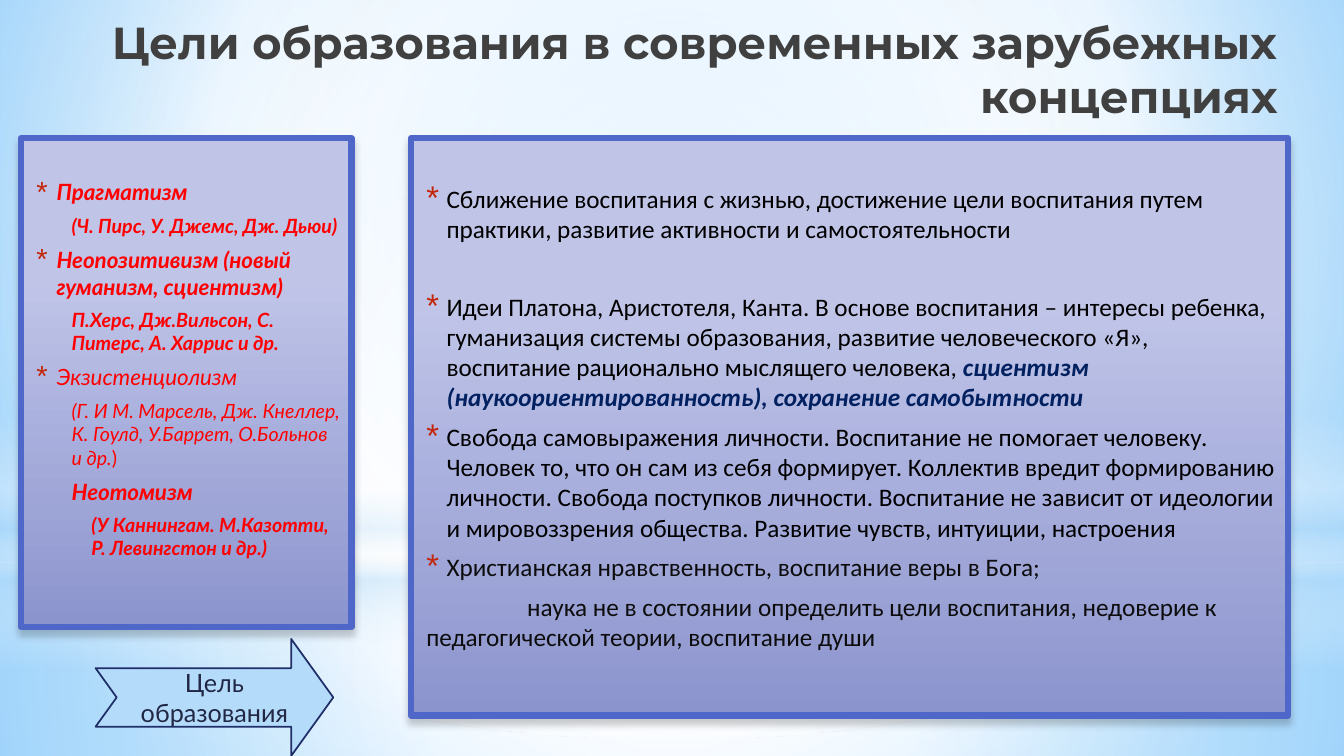
from lxml import etree
from pptx import Presentation, util as u
from pptx.dml.color import RGBColor
from pptx.enum import shapes, text
from pptx.oxml.ns import qn

RED, BLACK, NAVY = "FF0000", "000000", "002060"
PANEL_STOPS = [(28, "C0C5E8"), (100, "8C94CE")]
CENTRE = (50, 50, 50, 50)

SCHOOLS = [
    ("Прагматизм", 0, True),
    ("(Ч. Пирс, У. Джемс, Дж. Дьюи)", 1, True),
    ("Неопозитивизм (новый гуманизм, сциентизм)", 0, True),
    ("П.Херс, Дж.Вильсон, С. Питерс, А. Харрис и др.", 1, True),
    ("Экзистенциолизм", 0, False),
    ("(Г. И М. Марсель, Дж. Кнеллер, К. Гоулд, У.Баррет, О.Больнов и др.", 1, False),
    ("Неотомизм", 1, True),
    ("(У Каннингам. М.Казотти, Р. Левингстон и др.)", 1, True),
]
GOALS = [
    ("Сближение воспитания с жизнью, достижение цели воспитания путем практики, "
     "развитие активности и самостоятельности", BLACK),
    ("Идеи Платона, Аристотеля, Канта. В основе воспитания – интересы ребенка, "
     "гуманизация системы образования, развитие человеческого «Я», воспитание "
     "рационально мыслящего человека, ", BLACK),
    ("Свобода самовыражения личности. Воспитание не помогает человеку. Человек то, "
     "что он сам из себя формирует. Коллектив вредит формированию личности. Свобода "
     "поступков личности. Воспитание не зависит от идеологии и мировоззрения общества. "
     "Развитие чувств, интуиции, настроения", BLACK),
    ("Христианская нравственность, воспитание веры в Бога;", "0D0D0D"),
    ("наука не в состоянии определить цели воспитания, недоверие к педагогической "
     "теории, воспитание души", "0D0D0D"),
]


def colour(value):
    return RGBColor.from_string(value)


def child(parent, tag, **attributes):
    values = {name: str(value) for name, value in attributes.items()}
    return etree.SubElement(parent, qn(tag), values)


def gradient(owner, fill, stops, centre=None):
    fill.gradient()
    grad = owner.find(".//" + qn("a:gradFill"))
    grad.clear()
    grad.set("rotWithShape", "1")
    stop_list = child(grad, "a:gsLst")
    for position, value, *alpha in stops:
        stop = child(stop_list, "a:gs", pos=position * 1000)
        tint = child(stop, "a:srgbClr", val=value)
        if alpha:
            child(tint, "a:alpha", val=alpha[0] * 1000)
    if centre:
        route = child(grad, "a:path", path="circle")
        sides = {side: share * 1000 for side, share in zip("ltrb", centre)}
        child(route, "a:fillToRect", **sides)
    else:
        child(grad, "a:lin", ang=5400000, scaled=0)


def place(shape, left, top, width, height):
    shape.left, shape.top = u.Cm(left), u.Cm(top)
    shape.width, shape.height = u.Cm(width), u.Cm(height)


def set_font(font, name, size, value, bold=False, italic=False):
    font.name, font.size = name, u.Pt(size)
    font.bold, font.italic = bold, italic
    font.color.rgb = colour(value)


def add_glow(page, order, kind, top, height, stops, centre=None):
    glow = page.shapes.add_shape(kind, 0, u.Cm(top), u.Cm(33.87), u.Cm(height))
    glow.shadow.inherit = False
    gradient(glow.element, glow.fill, stops, centre)
    glow.line.fill.background()
    page.shapes.element.insert(2 + order, glow.element)


def add_backdrop(page):
    gradient(page.element, page.background.fill,
             [(0, "9ED5FF"), (60, "FFFFFF"), (100, "5BB9FF")], (20, 10, 20, 60))
    rectangle, oval = shapes.MSO_SHAPE.RECTANGLE, shapes.MSO_SHAPE.OVAL
    glows = [
        (rectangle, 14.17, 4.88,
         [(0, "FFFFFF", 91), (37, "FFFFFF", 76), (100, "B4DCFA", 79)], CENTRE),
        (rectangle, 0, 14.17,
         [(0, "FFFFFF", 89), (48, "FFFFFF", 62), (100, "B4DCFA", 79)], CENTRE),
        (rectangle, 10.46, 6.35,
         [(0, "FFFFFF", 0), (29, "FFFFFF", 30), (45, "B4DCFA", 40),
          (55, "FFFFFF", 26), (65, "B4DCFA", 60), (100, "FFFFFF", 0)]),
        (oval, 4.45, 14.17, [(0, "FFFFFF"), (56, "FFFFFF", 0)], CENTRE),
    ]
    for order, glow in enumerate(glows):
        add_glow(page, order, *glow)


def format_title(title):
    place(title, 0.79, 0.25, 31.67, 2.29)
    frame = title.text_frame
    frame.text = "Цели образования в современных зарубежных концепциях"
    frame.word_wrap = True
    frame.auto_size = text.MSO_AUTO_SIZE.NONE
    frame.vertical_anchor = text.MSO_ANCHOR.TOP
    para = frame.paragraphs[0]
    para.alignment = text.PP_ALIGN.RIGHT
    set_font(para.font, "Montserrat", 32, "404040", bold=True)


def format_panel(panel, bounds, top_inset):
    place(panel, *bounds)
    gradient(panel.element, panel.fill, PANEL_STOPS)
    panel.line.color.rgb = colour("4E67C8")
    panel.line.width = u.Pt(4.5)
    panel.shadow.inherit = False
    effects = panel.element.find(".//" + qn("a:effectLst"))
    shadow = child(effects, "a:outerShdw", blurRad=u.Pt(5), dist=u.Pt(4), dir=5400000)
    child(child(shadow, "a:srgbClr", val=BLACK), "a:alpha", val=20000)
    frame = panel.text_frame
    frame.word_wrap = True
    frame.auto_size = text.MSO_AUTO_SIZE.NONE
    frame.vertical_anchor = text.MSO_ANCHOR.TOP
    frame.margin_top = u.Cm(top_inset)
    return frame


def add_item(frame, first, wording, size, margin, indent, level=0, bullet=True):
    para = frame.paragraphs[0] if first else frame.add_paragraph()
    para.level = level
    para.alignment = text.PP_ALIGN.LEFT
    para.space_before = u.Pt(0 if first else size * 0.2)
    para.space_after = u.Pt(3)
    para.add_run().text = wording
    properties = para._p.get_or_add_pPr()
    properties.set("marL", str(u.Cm(margin)))
    properties.set("indent", str(u.Cm(indent)))
    if bullet:
        child(child(properties, "a:buClr"), "a:srgbClr", val="C3260C")
        child(properties, "a:buSzPct", val=130000)
        child(properties, "a:buChar", char="*")
    else:
        child(properties, "a:buNone")
    return para


def fill_schools(panel):
    frame = format_panel(panel, (0.53, 3.48, 8.33, 12.32), 1.02)
    for number, (wording, level, bold) in enumerate(SCHOOLS):
        size = 16 if level == 0 or wording == "Неотомизм" else 14
        last = number == len(SCHOOLS) - 1
        margin = 1.52 if last else (0.64, 1.02)[level]
        para = add_item(frame, number == 0, wording, size, margin,
                        0 if level else -0.51, level, level == 0)
        if wording.startswith("(Г."):
            set_font(para.runs[0].font, "Lato", size, RED, bold, True)
            bracket = para.add_run()
            bracket.text = ")"
            set_font(bracket.font, "Lato", size, RED)
        else:
            set_font(para.font, "Lato", size, RED, bold, True)


def fill_goals(panel):
    frame = format_panel(panel, (10.36, 3.48, 22.1, 14.55), 1.13)
    for number, (wording, value) in enumerate(GOALS):
        last = number == len(GOALS) - 1
        margin, indent = (0.13, 2.54) if last else (0.64, -0.51)
        para = add_item(frame, number == 0, wording, 18, margin, indent, bullet=not last)
        if number == 1:
            para.space_before = u.Pt(31)
            set_font(para.runs[0].font, "Calibri", 18, value)
            accent = para.add_run()
            accent.text = "сциентизм (наукоориентированность), сохранение самобытности"
            set_font(accent.font, "Calibri", 18, NAVY, True, True)
        else:
            set_font(para.font, "Calibri", 18, value)


def add_arrow(page):
    arrow = page.shapes.add_shape(shapes.MSO_SHAPE.NOTCHED_RIGHT_ARROW,
                                  u.Cm(2.41), u.Cm(16.1), u.Cm(5.99), u.Cm(2.95))
    arrow.adjustments[0], arrow.adjustments[1] = 0.5, 0.36
    arrow.shadow.inherit = False
    arrow.fill.solid()
    arrow.fill.fore_color.rgb = colour("B4DCFA")
    arrow.line.color.rgb = colour("1F2E69")
    arrow.line.width = u.Pt(1.25)
    frame = arrow.text_frame
    frame.word_wrap = True
    frame.vertical_anchor = text.MSO_ANCHOR.MIDDLE
    frame.text = "Цель образования"
    para = frame.paragraphs[0]
    para.alignment = text.PP_ALIGN.CENTER
    set_font(para.font, "Lato", 18, "212745")


def main():
    deck = Presentation()
    deck.slide_width, deck.slide_height = u.Cm(33.87), u.Cm(19.05)
    page = deck.slides.add_slide(deck.slide_layouts[3])
    add_backdrop(page)
    format_title(page.shapes.title)
    fill_schools(page.placeholders[1])
    fill_goals(page.placeholders[2])
    add_arrow(page)
    deck.save("out.pptx")


if __name__ == "__main__":
    main()
